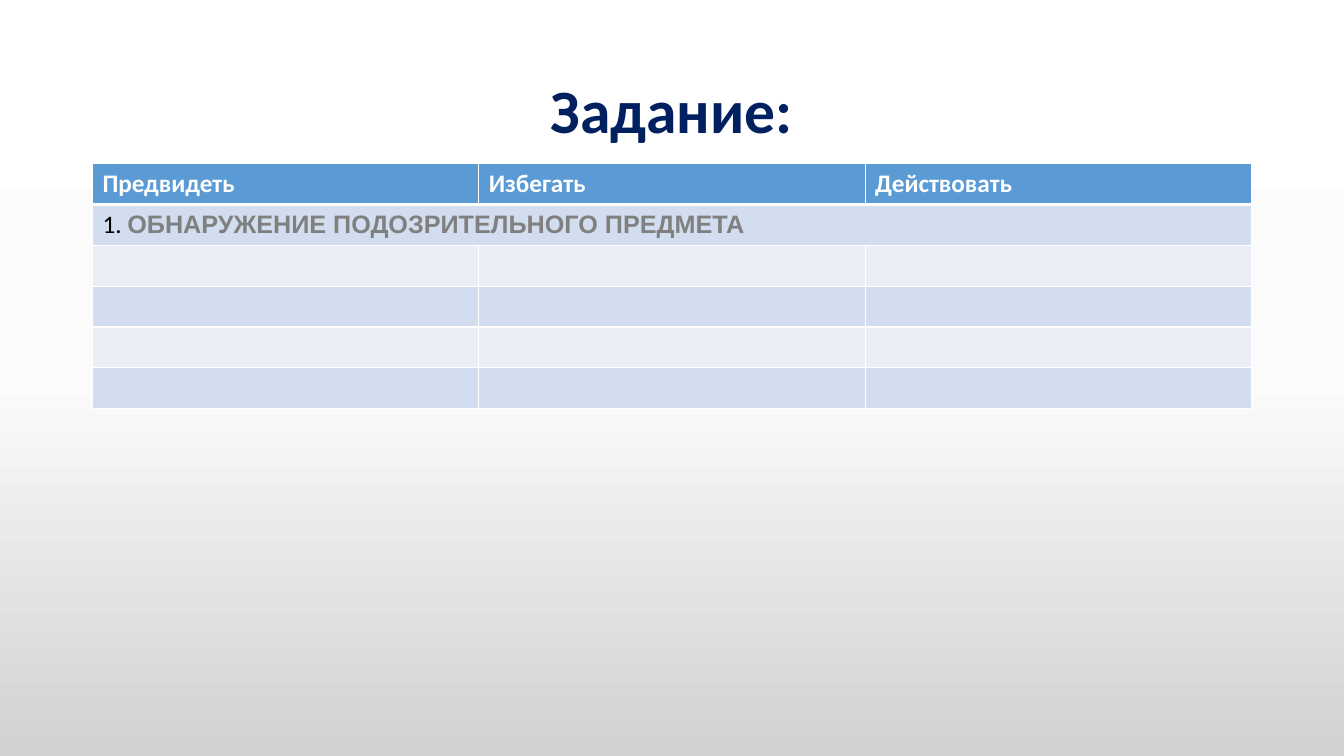
from copy import deepcopy

from lxml import etree
from pptx import Presentation
from pptx import util as u
from pptx.dml.color import RGBColor
from pptx.enum import text
from pptx.oxml import ns

HEADERS = ["Предвидеть", "Избегать", "Действовать"]
ROWS = 6
BANDS = ["EAEFF7", "D2DEEF"]


def rgb(value):
    """Turn a hex string into a colour."""
    return RGBColor.from_string(value)


def paint_background(s, stops):
    """Fill the slide from top to bottom with the given gradient stops."""
    fill = s.background.fill
    fill.gradient()
    fill.gradient_angle = 270
    gs_list = next(s.element.iter(ns.qn("a:gsLst")))
    while len(gs_list) < len(stops):
        gs_list.append(deepcopy(gs_list[0]))
    for stop, (position, color) in zip(fill.gradient_stops, stops):
        stop.position = position
        stop.color.rgb = rgb(color)


def add_run(p, content, size, color, bold=True, font="Calibri"):
    """Add one formatted run to a paragraph."""
    r = p.add_run()
    r.text = content
    r.font.name = font
    r.font.size = u.Pt(size)
    r.font.bold = bold
    r.font.color.rgb = rgb(color)


def add_title(s, content):
    """Add the centred slide title."""
    sp = s.shapes.add_textbox(u.Cm(2.33), u.Cm(1.01), u.Cm(29.21), u.Cm(3.68))
    tf = sp.text_frame
    tf.word_wrap = True
    tf.vertical_anchor = text.MSO_ANCHOR.MIDDLE
    p = tf.paragraphs[0]
    p.alignment = text.PP_ALIGN.CENTER
    p.line_spacing = 0.9
    add_run(p, content, 44, "002060")


def style_cell(cell, color, top=1, bottom=1):
    """Give a cell white borders and a solid fill."""
    tc_pr = cell._tc.get_or_add_tcPr()
    for side, width in zip("LRTB", (1, 1, top, bottom)):
        ln = etree.SubElement(tc_pr, ns.qn(f"a:ln{side}"), w=str(u.Pt(width)))
        solid = etree.SubElement(ln, ns.qn("a:solidFill"))
        etree.SubElement(solid, ns.qn("a:srgbClr"), val="FFFFFF")
    cell.fill.solid()
    cell.fill.fore_color.rgb = rgb(color)


def add_task_table(s):
    """Add the task table with its header, topic row and empty rows."""
    frame = s.shapes.add_table(ROWS, len(HEADERS), u.Cm(2.33), u.Cm(4.12),
                               u.Cm(29.21), u.Cm(1.03 * ROWS))
    table = frame.table
    table.horz_banding = False
    for row_no, row in enumerate(table.rows):
        row.height = u.Cm(1.03)
        for cell in row.cells:
            if row_no == 0:
                style_cell(cell, "5B9BD5", bottom=3)
            else:
                style_cell(cell, BANDS[row_no % 2], top=3 if row_no == 1 else 1)
    for cell, header in zip(table.rows[0].cells, HEADERS):
        add_run(cell.text_frame.paragraphs[0], header, 18, "FFFFFF")
    topic = table.cell(1, 0)
    topic.merge(table.cell(1, len(HEADERS) - 1))
    p = topic.text_frame.paragraphs[0]
    add_run(p, "1. ", 18, "000000", bold=False)
    add_run(p, "ОБНАРУЖЕНИЕ ПОДОЗРИТЕЛЬНОГО ПРЕДМЕТА", 18, "808080", font="Arial")


def main():
    """Build and save the slide."""
    prs = Presentation()
    prs.slide_width, prs.slide_height = u.Cm(33.87), u.Cm(19.05)
    s = prs.slides.add_slide(prs.slide_layouts[6])
    paint_background(s, [(0, "FFFFFF"), (0.5, "FBFBFB"), (1, "D1D1D1")])
    add_title(s, "Задание:")
    add_task_table(s)
    prs.save("out.pptx")


if __name__ == "__main__":
    main()
